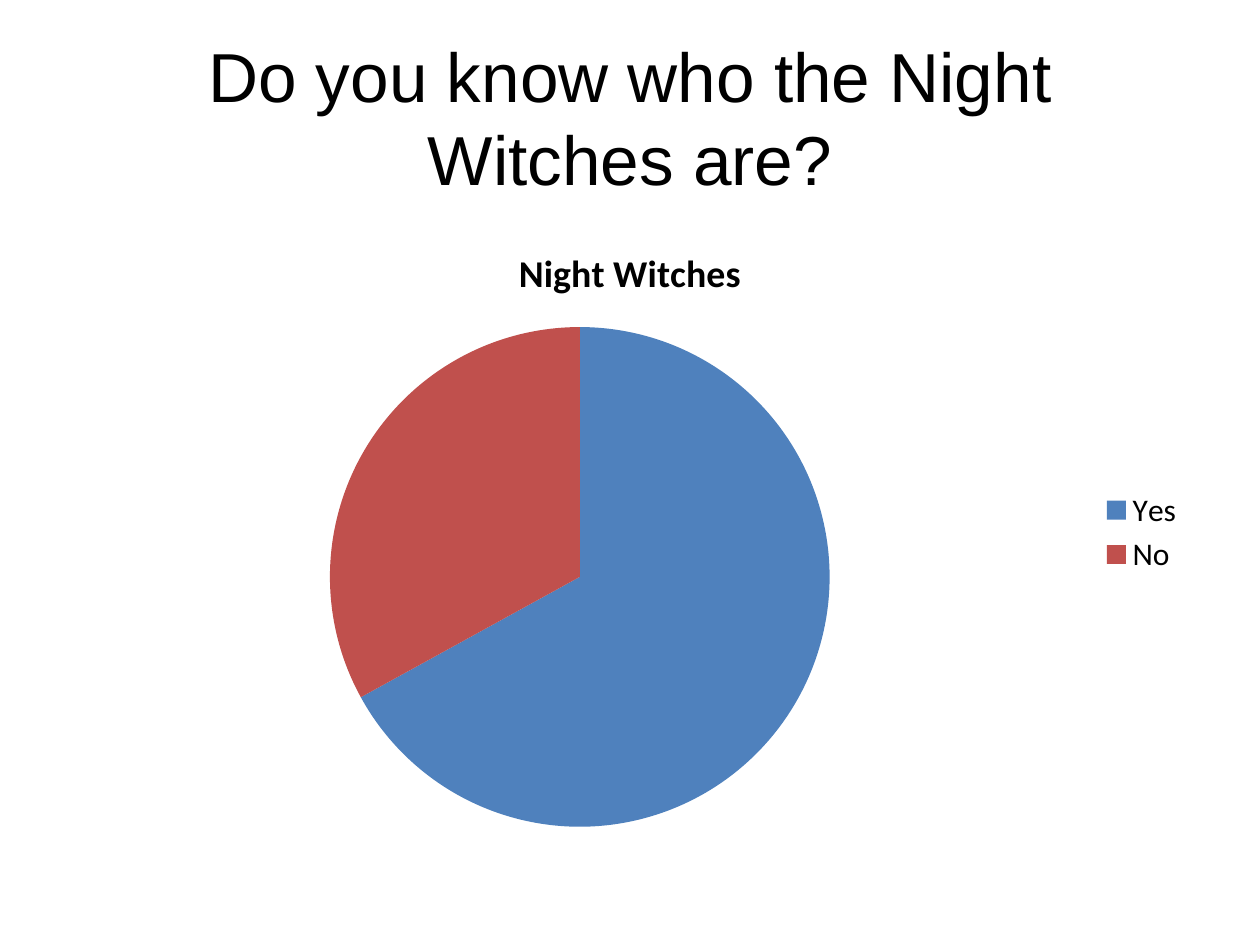
from pptx import Presentation
from pptx.chart.data import CategoryChartData
from pptx.dml.color import RGBColor
from pptx.enum import chart as ch, text
from pptx.util import Pt

BLACK = RGBColor(0x00, 0x00, 0x00)
BLUE = RGBColor(0x4F, 0x81, 0xBD)
RED = RGBColor(0xC0, 0x50, 0x4D)

ANSWERS = [("Yes", 67, BLUE), ("No", 33, RED)]


def style(font, name, size, bold=False):
    font.name = name
    font.size = Pt(size)
    font.bold = bold
    font.color.rgb = BLACK


def add_title(s, x, y, w, h, title):
    sp = s.shapes.title
    sp.left, sp.top, sp.width, sp.height = Pt(x), Pt(y), Pt(w), Pt(h)
    tf = sp.text_frame
    tf.text = title
    tf.word_wrap = True
    tf.auto_size = text.MSO_AUTO_SIZE.NONE
    tf.vertical_anchor = text.MSO_ANCHOR.MIDDLE
    p = tf.paragraphs[0]
    p.alignment = text.PP_ALIGN.CENTER
    style(p.runs[0].font, "Arial", 39.6)


def add_pie(s, x, y, w, h, title, answers):
    data = CategoryChartData()
    data.categories = [label for label, _, _ in answers]
    data.add_series(title, [value for _, value, _ in answers])
    chart = s.shapes.add_chart(
        ch.XL_CHART_TYPE.PIE, Pt(x), Pt(y), Pt(w), Pt(h), data
    ).chart
    style(chart.font, "Calibri", 18)

    chart.has_title = True
    tf = chart.chart_title.text_frame
    tf.text = title
    style(tf.paragraphs[0].runs[0].font, "Calibri", 21.6, bold=True)
    chart.chart_title.include_in_layout = False

    chart.has_legend = True
    chart.legend.position = ch.XL_LEGEND_POSITION.RIGHT
    chart.legend.include_in_layout = False

    plot = chart.plots[0]
    plot.vary_by_categories = True
    for i, (_, _, color) in enumerate(answers):
        fill = plot.series[0].points[i].format.fill
        fill.solid()
        fill.fore_color.rgb = color


def main():
    prs = Presentation()
    prs.slide_width, prs.slide_height = Pt(720), Pt(540)
    s = prs.slides.add_slide(prs.slide_layouts[5])
    add_title(s, 36, 21.6, 648, 90, "Do you know who the Night Witches are?")
    add_pie(s, 36, 126, 648, 356.4, "Night Witches", ANSWERS)
    prs.save("out.pptx")


if __name__ == "__main__":
    main()
